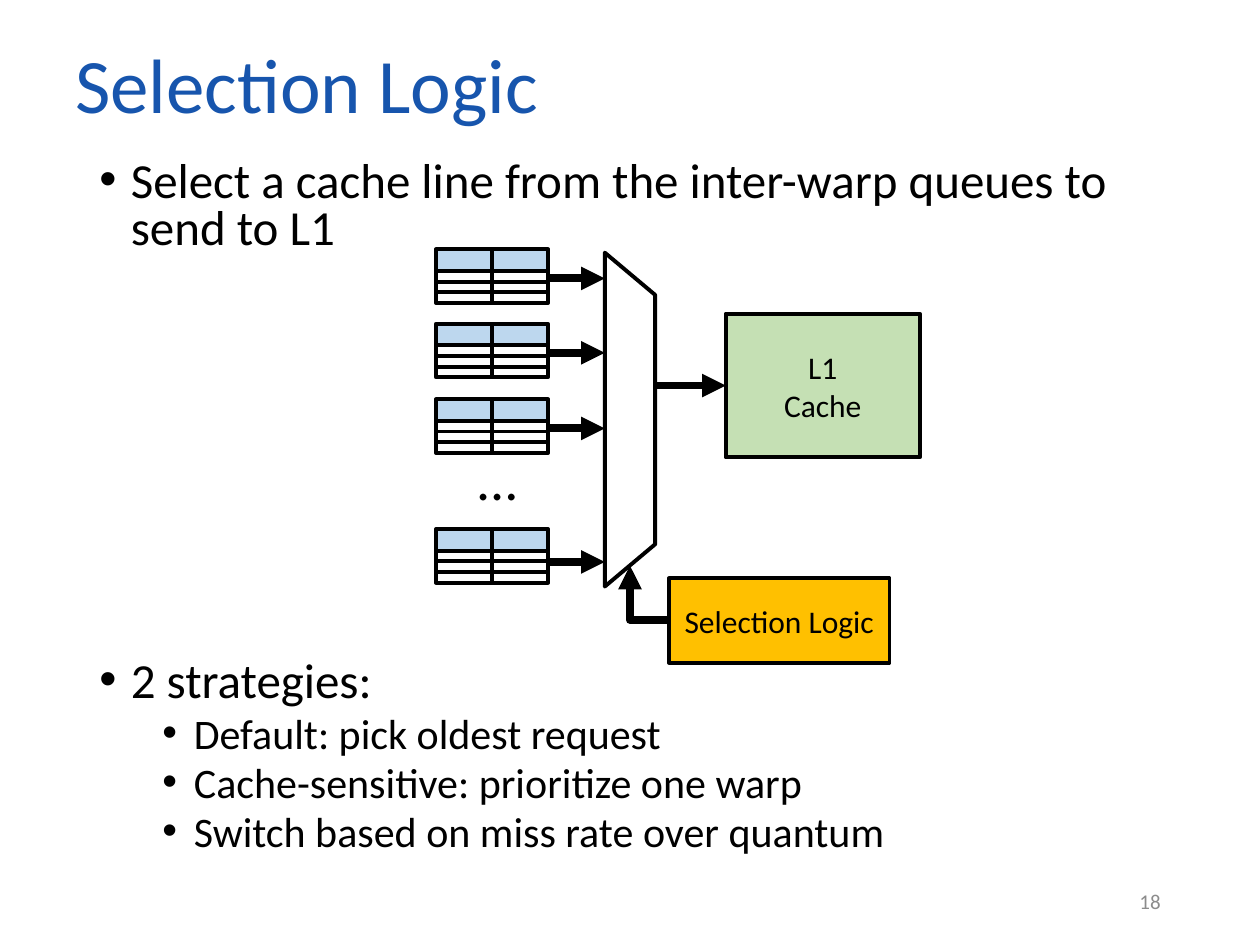
from lxml import etree
from pptx import Presentation, util as u
from pptx.dml.color import RGBColor
from pptx.enum import shapes, text
from pptx.oxml import ns

BLACK, WHITE = "000000", "FFFFFF"


def color(hex_value):
    return RGBColor.from_string(hex_value)


def grid(*cells):
    """Columns and rows are a hundredth of the slide's width: 100 by 75."""
    return [u.Inches(cell / 10) for cell in cells]


presentation = Presentation()
presentation.slide_width, presentation.slide_height = grid(100, 75)
slide = presentation.slides.add_slide(presentation.slide_layouts[6])

# Rectangles: four queues of a header row and three entry rows, then the blocks
column_width, header_height, entry_height = 4.45, 1.7, 0.85
queue_left, queue_tops = 34.6, (19.8, 25.7, 31.7, 42)
rectangles = []
for queue_top in queue_tops:
    for column in range(2):
        left = queue_left + column * column_width
        rectangles.append((left, queue_top, column_width, header_height, "BDD7EE", []))
        for entry in range(3):
            top = queue_top + header_height + entry * entry_height
            rectangles.append((left, top, column_width, entry_height, WHITE, []))
rectangles += [
    (53.1, 45.9, 17.5, 6.7, "FFC000", ["Selection Logic"]),
    (57.6, 24.9, 15.4, 11.4, "C5E0B4", ["L1", "Cache"]),
]
outlined = []
labels = []
for *place, fill, lines in rectangles:
    shape = slide.shapes.add_shape(shapes.MSO_SHAPE.RECTANGLE, *grid(*place))
    outlined.append((shape, fill))
    if lines:
        labels.append((shape, lines, 18, BLACK, text.PP_ALIGN.CENTER, text.MSO_ANCHOR.MIDDLE))
cache = shape

# Multiplexer
multiplexer = slide.shapes.add_shape(shapes.MSO_SHAPE.TRAPEZOID, *grid(36.75, 31.3, 26.5, 4))
multiplexer.rotation = 90
multiplexer.adjustments[0] = 0.84
outlined.append((multiplexer, WHITE))

for shape, fill in outlined:
    shape.shadow.inherit = False
    shape.fill.solid()
    shape.fill.fore_color.rgb = color(fill)
    shape.line.color.rgb = color(BLACK)
    shape.line.width = u.Pt(2.25)

# Arrows: queues to multiplexer, multiplexer to cache, selection logic to multiplexer
straight, elbow = shapes.MSO_CONNECTOR.STRAIGHT, shapes.MSO_CONNECTOR.ELBOW
routes = [(straight, 43.5, y, 48, y) for y in (22.1, 28, 34, 44.6)]
routes += [(elbow, 53.1, 49.2, 50, 44.9), (straight, 52, 30.6, 57.6, 30.6)]
for kind, *ends in routes:
    arrow = slide.shapes.add_connector(kind, *grid(*ends))
    arrow.line.color.rgb = color(BLACK)
    arrow.line.width = u.Pt(4.5)
    etree.SubElement(arrow.line._get_or_add_ln(), ns.qn("a:tailEnd"), type="triangle")
    properties = arrow._element.spPr
    etree.SubElement(properties, ns.qn("a:effectLst"))
    if kind == elbow:
        properties.find(ns.qn("a:prstGeom")).set("prst", "bentConnector2")
arrow.end_connect(cache, 1)

# Title, ellipsis and slide number
left_align, right_align = text.PP_ALIGN.LEFT, text.PP_ALIGN.RIGHT
top_anchor, middle_anchor = text.MSO_ANCHOR.TOP, text.MSO_ANCHOR.MIDDLE
for place, line, size, ink, alignment, anchor in [
    ((5, 2, 90, 9.2), "Selection Logic", 44, "1755AD", left_align, middle_anchor),
    ((36.8, 34.8, 19.9, 6.4), "...", 32, BLACK, left_align, top_anchor),
    ((70.6, 69.5, 22.5, 4), "18", 12, "8C8C8C", right_align, middle_anchor),
]:
    shape = slide.shapes.add_textbox(*grid(*place))
    labels.append((shape, [line], size, ink, alignment, anchor))

for shape, lines, size, ink, alignment, anchor in labels:
    frame = shape.text_frame
    frame.word_wrap = True
    frame.vertical_anchor = anchor
    frame.text = "\n".join(lines)
    for paragraph in frame.paragraphs:
        paragraph.alignment = alignment
        font_format = {"name": "Calibri", "size": u.Pt(size)}
        for name, value in font_format.items():
            setattr(paragraph.font, name, value)
        paragraph.font.color.rgb = color(ink)

# Bullets: level, space before in points, wording; the wide space holds the diagram
bullets = [
    (0, 10, "Select a cache line from the inter-warp queues to send to L1"),
    (0, 232, "2 strategies:"),
    (1, 5, "Default: pick oldest request"),
    (1, 5, "Cache-sensitive: prioritize one warp"),
    (1, 5, "Switch based on miss rate over quantum"),
]
frame = slide.shapes.add_textbox(*grid(6.9, 12.3, 86.2, 58.6)).text_frame
frame.word_wrap = True
for index, (level, space, wording) in enumerate(bullets):
    paragraph = frame.add_paragraph() if index else frame.paragraphs[0]
    paragraph.text = wording
    paragraph_format = {"level": level, "line_spacing": 0.8, "space_before": u.Pt(space)}
    for name, value in paragraph_format.items():
        setattr(paragraph, name, value)
    font_format = {"name": "Calibri", "size": u.Pt(28 - 4 * level)}
    for name, value in font_format.items():
        setattr(paragraph.font, name, value)
    paragraph.font.color.rgb = color(BLACK)
    properties = paragraph._p.get_or_add_pPr()
    properties.set("marL", str(u.Inches(0.25 + 0.5 * level)))
    properties.set("indent", str(-u.Inches(0.25)))
    bullet_font = etree.Element(ns.qn("a:buFont"), typeface="Arial")
    bullet_mark = etree.Element(ns.qn("a:buChar"), char="•")
    defaults = properties.find(ns.qn("a:defRPr"))
    defaults.addprevious(bullet_font)
    defaults.addprevious(bullet_mark)

presentation.save("out.pptx")
